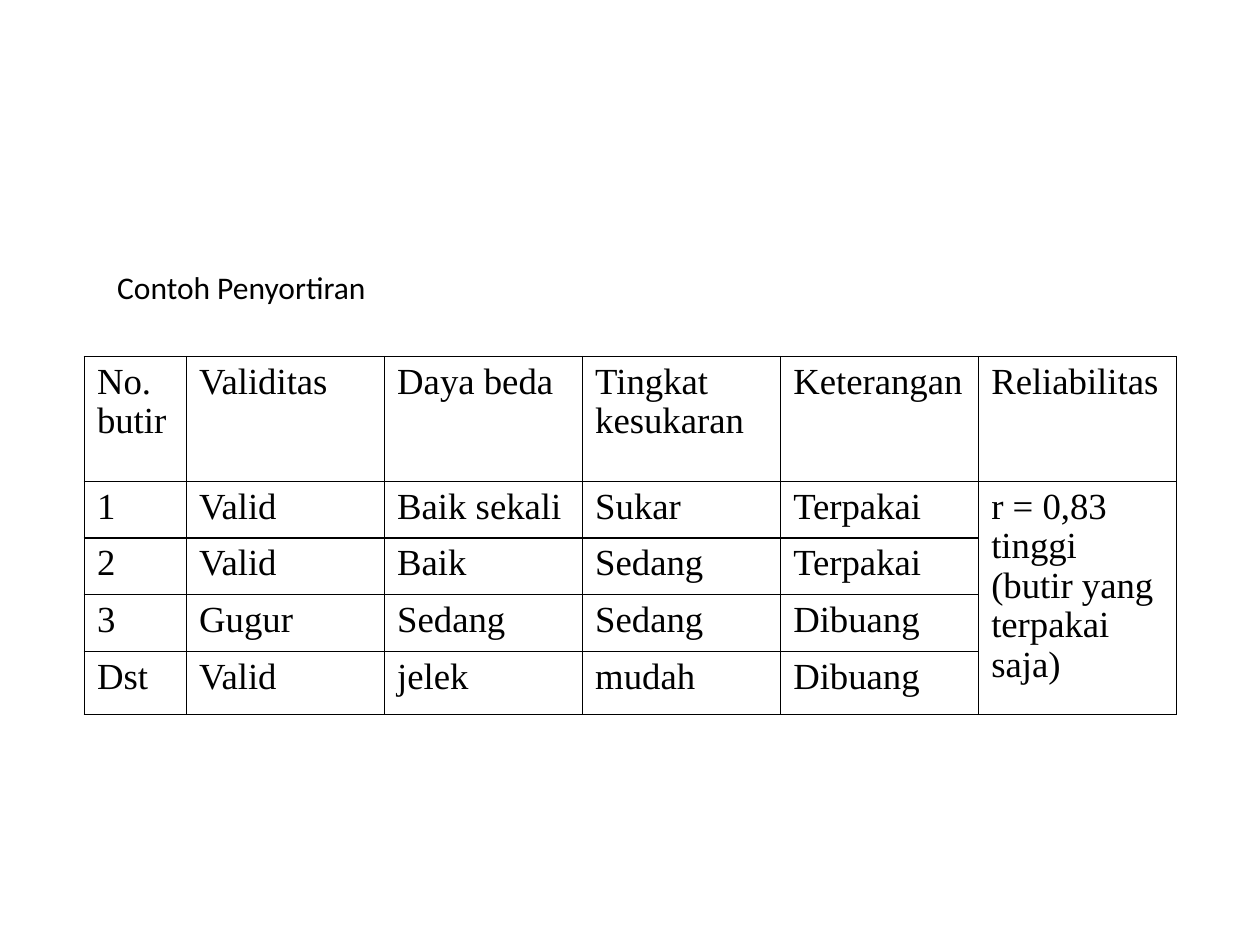
from lxml import etree
from pptx import Presentation
from pptx.dml.color import RGBColor
from pptx.enum.text import MSO_ANCHOR, MSO_AUTO_SIZE, PP_ALIGN
from pptx.oxml.ns import qn
from pptx.util import Inches, Pt

TOP = MSO_ANCHOR.TOP
LEFT = PP_ALIGN.LEFT
NO_AUTOFIT = MSO_AUTO_SIZE.NONE
BLACK = RGBColor(0x00, 0x00, 0x00)
TITLE_ONLY = 5

HEADING_BOX = (0.83, 2.08, 2.35, 0.4)
TABLE_BOX = (0.67, 2.83, 8.67, 2.84)
COLUMN_SHARES = [0.81] + [1.57] * 5
ROW_SHARES = [0.99] + [0.45] * 3 + [0.5]

ITEMS = [
    ["No. butir", "Validitas", "Daya beda", "Tingkat kesukaran", "Keterangan", "Reliabilitas"],
    ["1", "Valid", "Baik sekali", "Sukar", "Terpakai"],
    ["2", "Valid", "Baik", "Sedang", "Terpakai"],
    ["3", "Gugur", "Sedang", "Sedang", "Dibuang"],
    ["Dst", "Valid", "jelek", "mudah", "Dibuang"],
]
RELIABILITY = ["r = 0,83", "tinggi (butir yang terpakai saja)"]


def add_text(paragraph, text, font_name, size):
    paragraph.alignment = LEFT
    run = paragraph.add_run()
    run.text = text
    run.font.name = font_name
    run.font.size = Pt(size)
    run.font.bold = False
    run.font.color.rgb = BLACK


def place_heading(heading, box):
    heading.left, heading.top, heading.width, heading.height = map(Inches, box)
    frame = heading.text_frame
    frame.auto_size = NO_AUTOFIT
    frame.word_wrap = True
    frame.vertical_anchor = TOP
    add_text(frame.paragraphs[0], "Contoh Penyortiran", "Calibri", 18)


def draw_borders(cell):
    properties = cell._tc.get_or_add_tcPr()
    for position, side in enumerate(("a:lnL", "a:lnR", "a:lnT", "a:lnB")):
        border = etree.Element(qn(side), w=str(Pt(1)))
        fill = etree.SubElement(border, qn("a:solidFill"))
        etree.SubElement(fill, qn("a:srgbClr"), val=str(BLACK))
        properties.insert(position, border)


def fill_cell(cell, lines):
    frame = cell.text_frame
    for index, line in enumerate(lines):
        paragraph = frame.add_paragraph() if index else frame.paragraphs[0]
        paragraph.line_spacing = 0.97
        add_text(paragraph, line, "Times New Roman", 21)


def place_sorting_table(slide, box):
    left, top, width, height = map(Inches, box)
    table = slide.shapes.add_table(
        len(ROW_SHARES), len(COLUMN_SHARES), left, top, width, height
    ).table
    table.first_row = False
    table.horz_banding = False
    for column, share in zip(table.columns, COLUMN_SHARES):
        column.width = int(width * share / sum(COLUMN_SHARES))
    for row, share in zip(table.rows, ROW_SHARES):
        row.height = int(height * share / sum(ROW_SHARES))
    for cell in table.iter_cells():
        cell.fill.background()
        draw_borders(cell)
    for row, values in enumerate(ITEMS):
        for column, value in enumerate(values):
            fill_cell(table.cell(row, column), [value])
    last_column = len(COLUMN_SHARES) - 1
    reliability = table.cell(1, last_column)
    reliability.merge(table.cell(len(ROW_SHARES) - 1, last_column))
    fill_cell(reliability, RELIABILITY)


def main():
    deck = Presentation()
    deck.slide_width, deck.slide_height = Inches(10), Inches(7.5)
    slide = deck.slides.add_slide(deck.slide_layouts[TITLE_ONLY])
    place_heading(slide.shapes.title, HEADING_BOX)
    place_sorting_table(slide, TABLE_BOX)
    deck.save("out.pptx")


if __name__ == "__main__":
    main()
